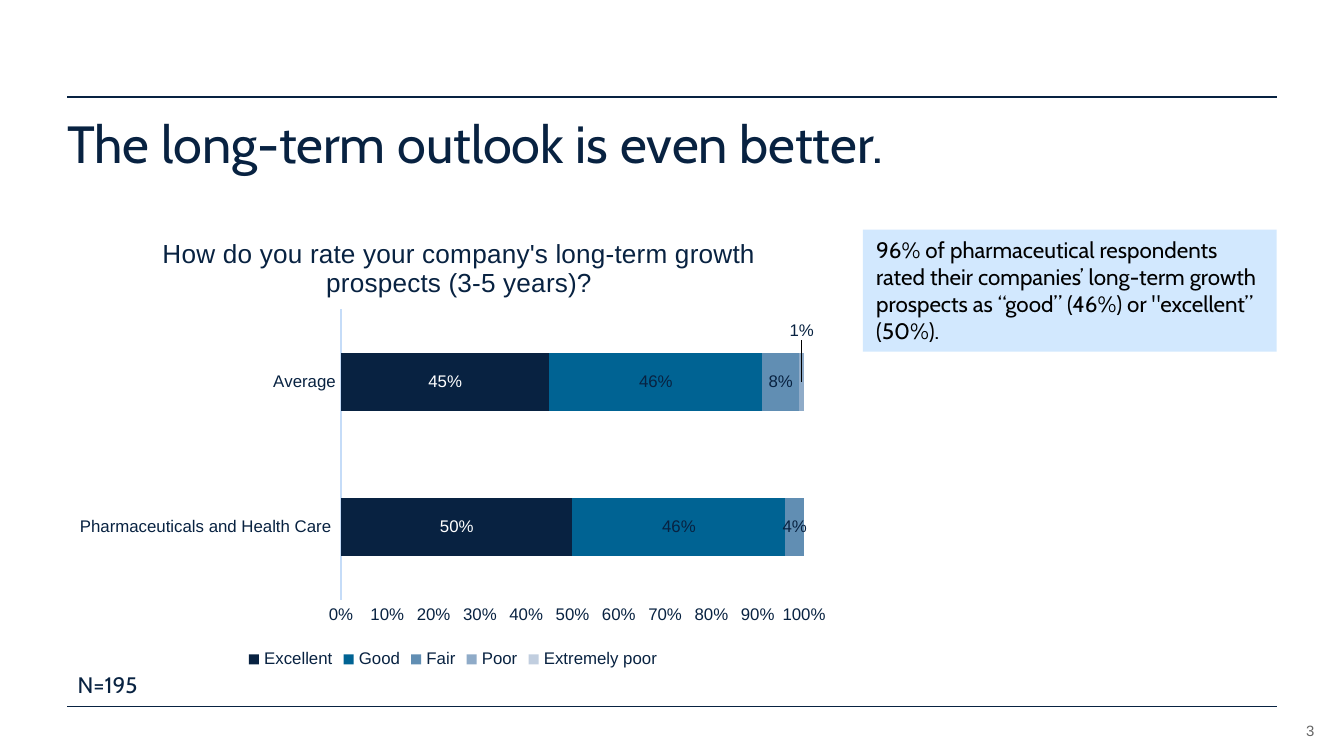
from pptx import Presentation
from pptx.chart.data import CategoryChartData
from pptx.dml.color import RGBColor
from pptx.enum.chart import XL_CHART_TYPE as ChartType
from pptx.enum.chart import XL_LABEL_POSITION as LabelPosition
from pptx.enum.chart import XL_LEGEND_POSITION as LegendPosition
from pptx.enum.chart import XL_TICK_MARK as TickMark
from pptx.enum.shapes import MSO_CONNECTOR as Connector
from pptx.enum.shapes import MSO_SHAPE as Shape
from pptx.enum.text import MSO_ANCHOR as Anchor
from pptx.enum.text import PP_ALIGN as Align
from pptx.oxml import parse_xml
from pptx.oxml.ns import nsdecls, qn
from pptx.util import Cm, Pt
from lxml import etree

NAVY = RGBColor(0x08, 0x22, 0x41)
TEAL = RGBColor(0x00, 0x63, 0x93)
STEEL = RGBColor(0x61, 0x8E, 0xB3)
MIST = RGBColor(0x8F, 0xAB, 0xC8)
PALE = RGBColor(0xC1, 0xCE, 0xDF)
AXIS_BLUE = RGBColor(0xC5, 0xDC, 0xF8)
CALLOUT_BLUE = RGBColor(0xD2, 0xE8, 0xFE)
GRAY = RGBColor(0x66, 0x66, 0x66)
WHITE = RGBColor(0xFF, 0xFF, 0xFF)
BLACK = RGBColor(0x00, 0x00, 0x00)

CATEGORIES = ["Pharmaceuticals and Health Care ", "Average"]
RATINGS = [
    ("Excellent", (0.5, 0.45), NAVY, WHITE),
    ("Good", (0.46, 0.46), TEAL, NAVY),
    ("Fair", (0.04, 0.08), STEEL, NAVY),
    ("Poor", (None, 0.01), MIST, NAVY),
    ("Extremely poor", (None, None), PALE, NAVY),
]


def style_font(font, size, color, name="Arial"):
    font.name = name
    font.size = Pt(size)
    font.bold = False
    font.color.rgb = color


def add_rule(slide, top):
    rule = slide.shapes.add_connector(
        Connector.STRAIGHT, Cm(1.27), Cm(top), Cm(24.13), Cm(top))
    rule.line.color.rgb = NAVY
    rule.line.width = Pt(0.75)
    etree.SubElement(rule._element.spPr, qn("a:effectLst"))


def write_text(shape, text, size, color, font_name="Cabin", inset=True,
               anchor=Anchor.TOP, align=Align.LEFT, spacing=1.0):
    frame = shape.text_frame
    frame.word_wrap = True
    frame.vertical_anchor = anchor
    frame.margin_left = frame.margin_right = Cm(0.25 if inset else 0)
    frame.margin_top = frame.margin_bottom = Cm(0.13 if inset else 0)
    frame.text = text
    paragraph = frame.paragraphs[0]
    paragraph.alignment = align
    paragraph.line_spacing = spacing
    style_font(paragraph.runs[0].font, size, color, font_name)


def add_text(slide, box, text, size, color, **options):
    shape = slide.shapes.add_textbox(*map(Cm, box))
    write_text(shape, text, size, color, **options)


def add_callout(slide, box, text):
    shape = slide.shapes.add_shape(Shape.RECTANGLE, *map(Cm, box))
    shape.shadow.inherit = False
    shape.fill.solid()
    shape.fill.fore_color.rgb = CALLOUT_BLUE
    shape.line.fill.background()
    write_text(shape, text, 12, BLACK)


def set_layout(parent, index, modes=(), **position):
    for layout in parent.findall(qn("c:layout")):
        parent.remove(layout)
    parts = [f'<c:{mode} val="{value}"/>' for mode, value in modes]
    parts += [f'<c:{key} val="{value}"/>' for key, value in position.items()]
    parent.insert(index, parse_xml(
        f'<c:layout {nsdecls("c")}><c:manualLayout>{"".join(parts)}'
        "</c:manualLayout></c:layout>"))


def style_axis(axis):
    axis.has_major_gridlines = False
    axis.major_tick_mark = axis.minor_tick_mark = TickMark.NONE
    style_font(axis.tick_labels.font, 9, NAVY)


def style_series(series, fill_color, label_color):
    series.format.fill.solid()
    series.format.fill.fore_color.rgb = fill_color
    labels = series.data_labels
    labels.show_value = True
    labels.position = LabelPosition.CENTER
    labels.number_format = "0%"
    labels.number_format_is_linked = False
    style_font(labels.font, 9, label_color)


def raise_label(series, point_index):
    label = series.points[point_index].data_label
    label.position = LabelPosition.CENTER
    style_font(label.font, 9, NAVY)
    element = series.data_labels._element.find(qn("c:dLbl"))
    set_layout(element, 1, x=0, y=-0.11)


def add_ratings_chart(slide, box):
    data = CategoryChartData(number_format="0%")
    data.categories = CATEGORIES
    for name, values, _, _ in RATINGS:
        data.add_series(name, values)
    chart = slide.shapes.add_chart(
        ChartType.BAR_STACKED_100, *map(Cm, box), data).chart
    style_font(chart.font, 10, NAVY)

    chart.has_title = True
    title = chart.chart_title
    title.text_frame.text = ("How do you rate your company's long-term growth "
                             "prospects (3-5 years)?")
    style_font(title.text_frame.paragraphs[0].runs[0].font, 14, NAVY)
    edges = [("xMode", "edge"), ("yMode", "edge")]
    set_layout(title._element, 1, edges, x=0.12, y=0.05)
    plot_area = chart._chartSpace.chart.plotArea
    set_layout(plot_area, 0, [("layoutTarget", "inner")] + edges,
               x=0.356, y=0.216, w=0.596, h=0.624)

    chart.has_legend = True
    chart.legend.position = LegendPosition.BOTTOM
    chart.legend.include_in_layout = False
    style_font(chart.legend.font, 9, NAVY)

    style_axis(chart.category_axis)
    chart.category_axis.format.line.color.rgb = AXIS_BLUE
    chart.category_axis.format.line.width = Pt(0.75)
    value_axis = chart.value_axis
    style_axis(value_axis)
    value_axis.format.line.fill.background()
    value_axis.minimum_scale = 0
    value_axis.maximum_scale = 1
    value_axis.major_unit = 0.1
    value_axis.tick_labels.number_format = "0%"
    value_axis.tick_labels.number_format_is_linked = False

    plot = chart.plots[0]
    plot.vary_by_categories = False
    plot.gap_width = 150
    plot.overlap = 100
    for series, (_, _, fill_color, label_color) in zip(plot.series, RATINGS):
        style_series(series, fill_color, label_color)
    raise_label(plot.series[3], 1)


def main():
    presentation = Presentation()
    presentation.slide_width = Cm(25.4)
    presentation.slide_height = Cm(14.29)
    slide = presentation.slides.add_slide(presentation.slide_layouts[6])

    for top in (1.83, 13.36):
        add_rule(slide, top)
    add_text(slide, (23.65, 13.51, 1.19, 0.46), "3", 8, GRAY,
             font_name="Arial", inset=False, anchor=Anchor.BOTTOM,
             align=Align.RIGHT)
    add_text(slide, (1.27, 2.24, 22.86, 1.4),
             "The long-term outlook is even better.", 28, NAVY,
             inset=False, spacing=0.9)
    add_callout(slide, (16.31, 4.34, 7.82, 2.31),
                "96% of pharmaceutical respondents rated their companies’ "
                "long-term growth prospects as “good” (46%) or "
                "\"excellent” (50%).")
    add_text(slide, (1.22, 12.55, 4.19, 0.76), "N=195", 12, NAVY)
    add_ratings_chart(slide, (1.22, 3.94, 14.68, 8.81))
    presentation.save("out.pptx")


if __name__ == "__main__":
    main()
